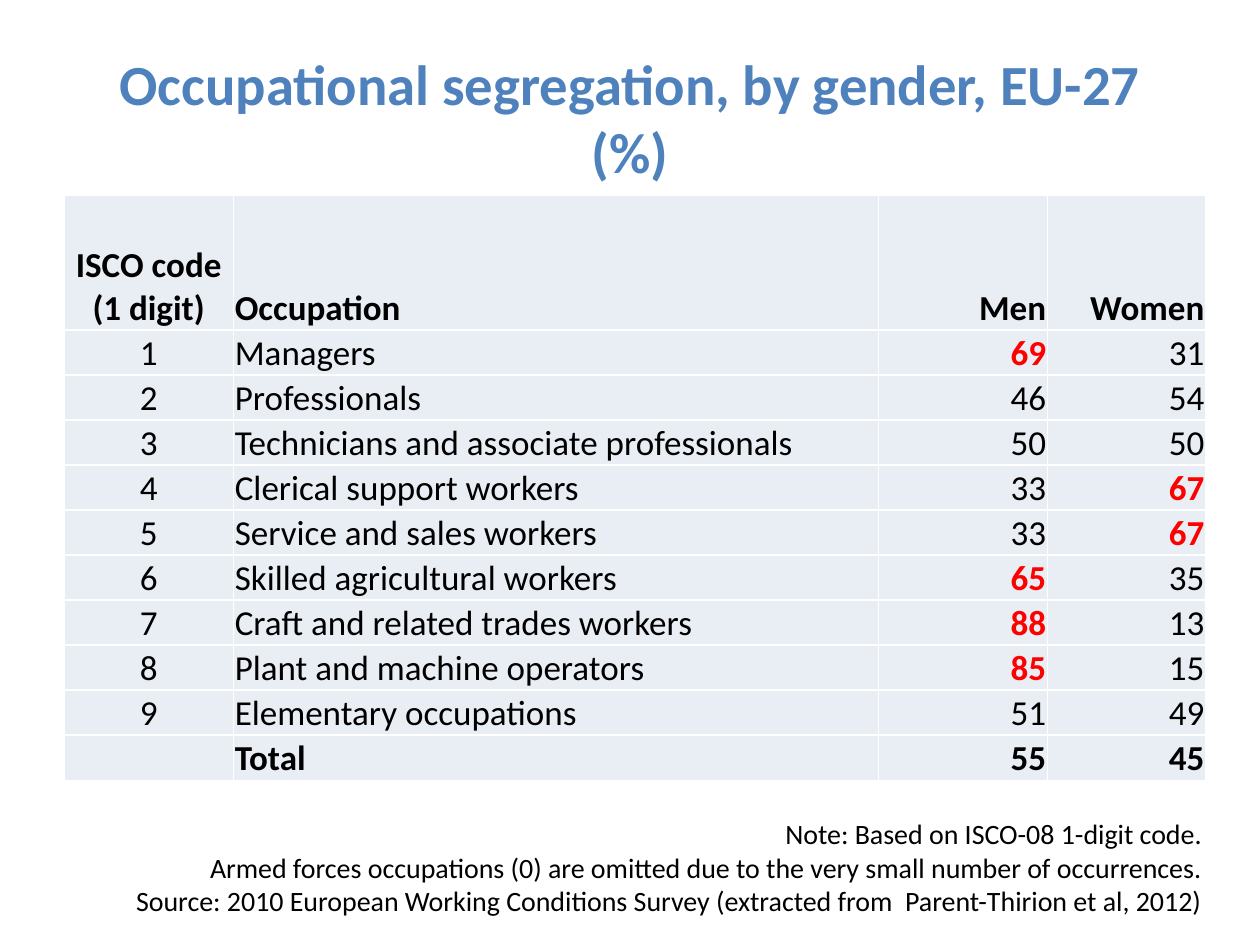
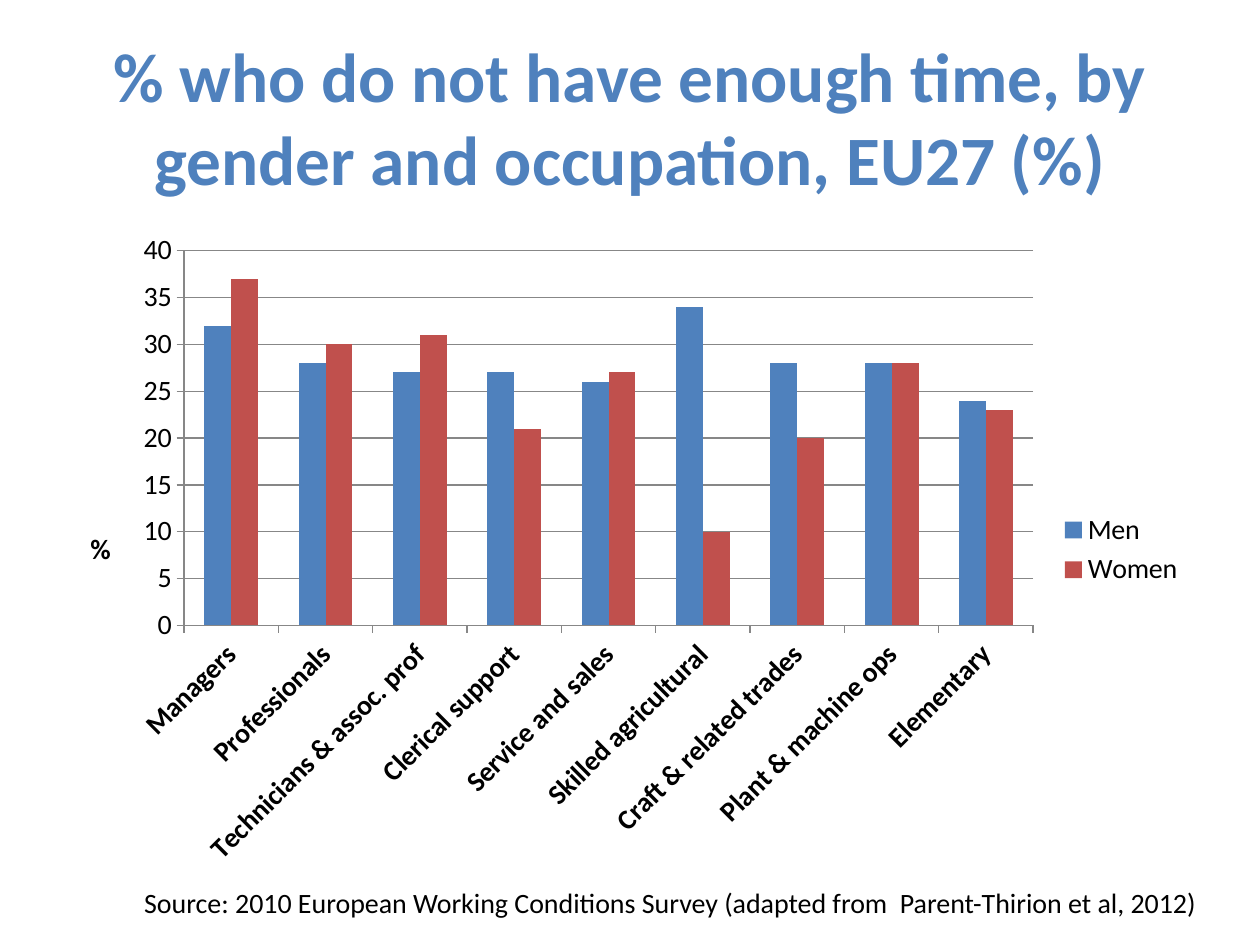
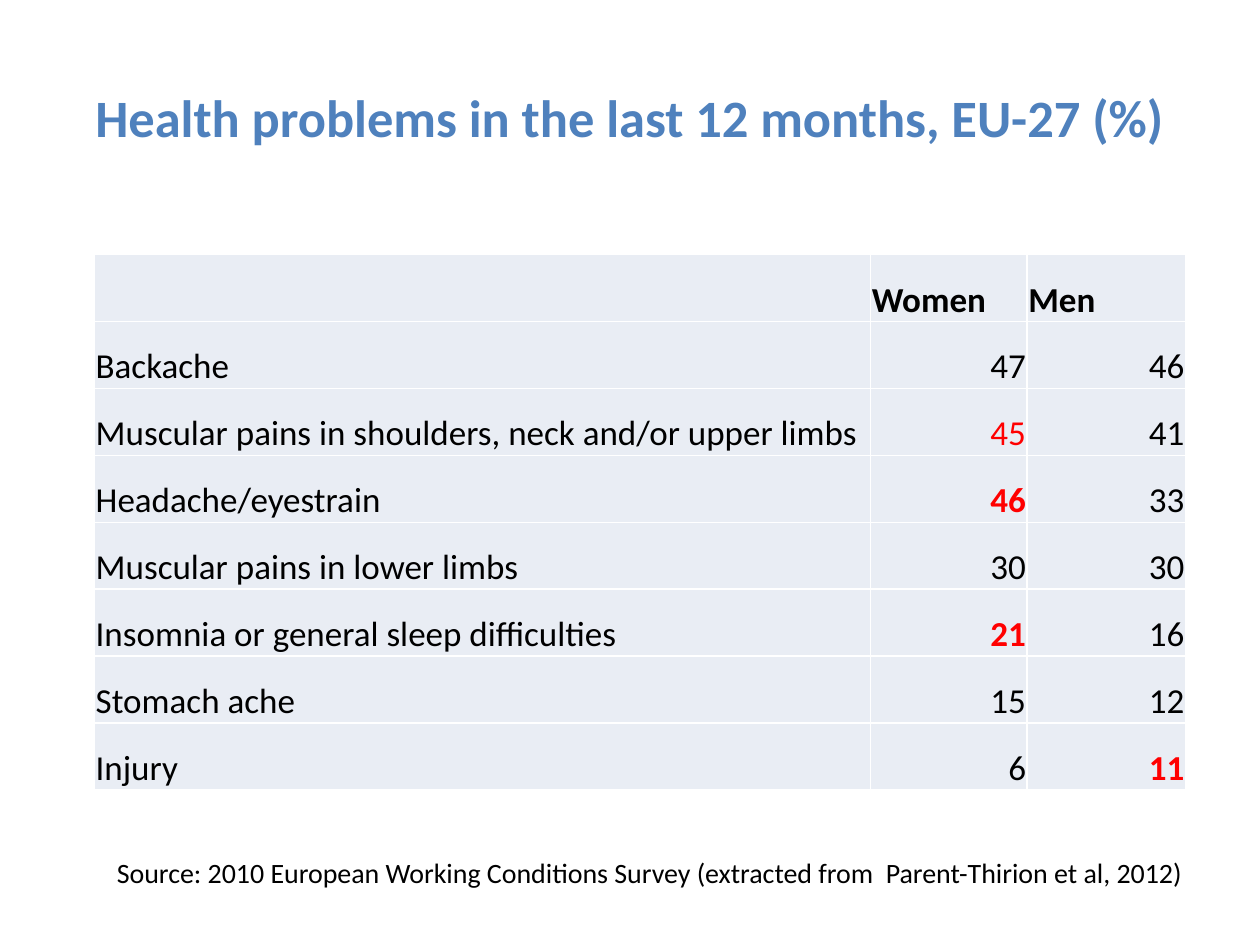
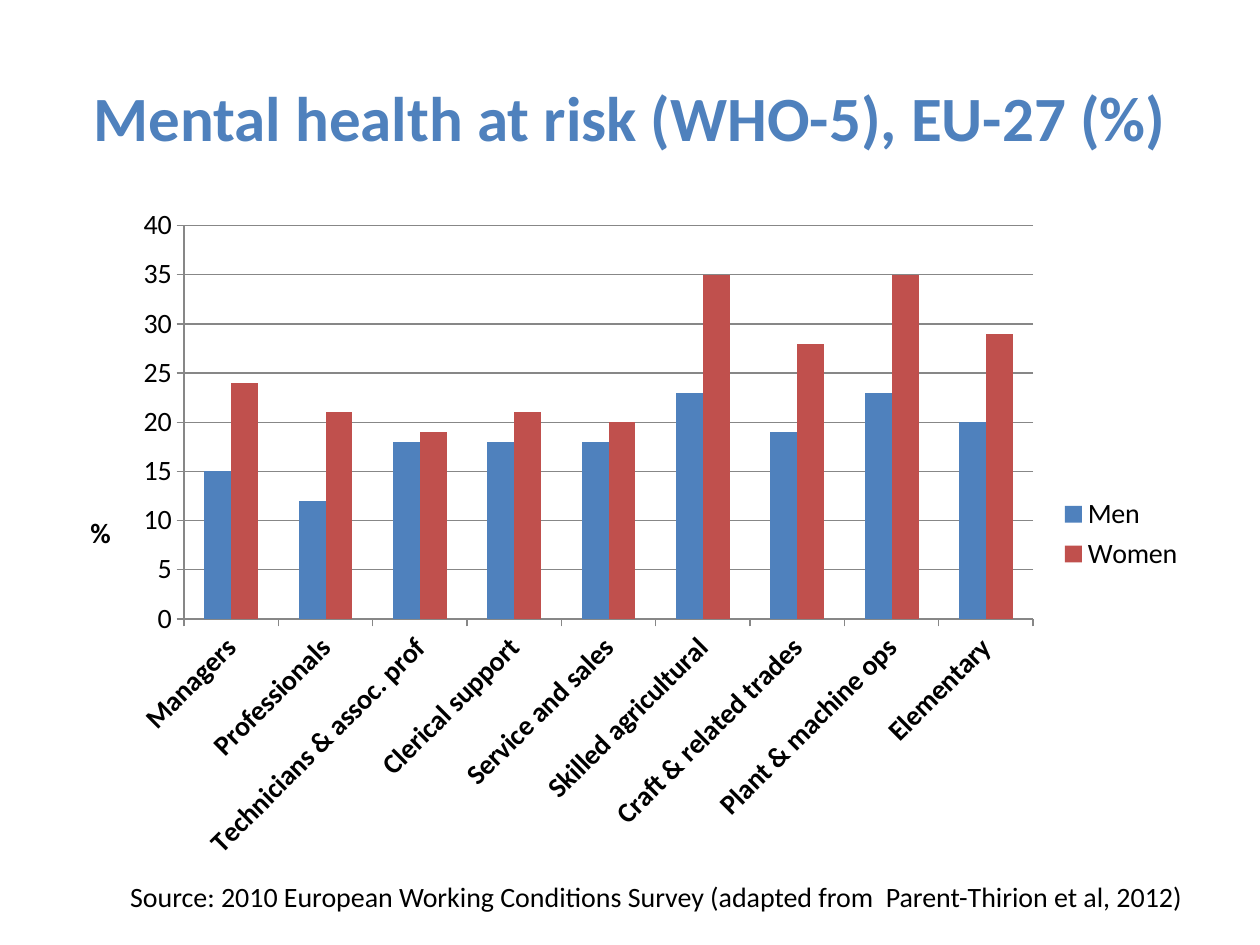
"""Build four slides on gender, occupation and health at work in the EU."""
from lxml.etree import SubElement
from pptx import Presentation
from pptx.chart.data import CategoryChartData
from pptx.dml.color import RGBColor
from pptx.enum.chart import XL_CHART_TYPE, XL_LEGEND_POSITION, XL_TICK_MARK
from pptx.enum.text import MSO_ANCHOR, MSO_AUTO_SIZE, PP_ALIGN
from pptx.oxml.ns import qn
from pptx.util import Pt

COLORS = {"title": "4F81BD", "text": "000000", "red": "FF0000", "cell": "E9EDF4",
          "border": "FFFFFF", "men": "4F81BD", "women": "C0504D", "axis": "878787"}
FONT = "Calibri"
SURVEY = "Source: 2010 European Working Conditions Survey"
EXTRACTED = f"{SURVEY} (extracted from  Parent-Thirion et al, 2012)"
ADAPTED = f"{SURVEY} (adapted from  Parent-Thirion et al, 2012)"
OCCUPATIONS = ["Managers", "Professionals", "Technicians & assoc. prof",
               "Clerical support", "Service and sales", "Skilled agricultural",
               "Craft & related trades", "Plant & machine ops", "Elementary"]
L, C, R = PP_ALIGN.LEFT, PP_ALIGN.CENTER, PP_ALIGN.RIGHT

SLIDES = [
    {"title": "Occupational segregation, by gender, EU-27 (%)", "size": 32.4,
     "table": {
         "at": (36.5, 111.5), "cols": [97, 368.5, 96.5, 90.5],
         "head_height": 77, "row_height": 25.75,
         "head_align": [C, L, R, R], "align": [C, L, R, R],
         "rows": [
             ("ISCO code (1 digit)", "Occupation", "Men", "Women"),
             ("1", "Managers", "69", "31"),
             ("2", "Professionals", "46", "54"),
             ("3", "Technicians and associate professionals", "50", "50"),
             ("4", "Clerical support workers", "33", "67"),
             ("5", "Service and sales workers", "33", "67"),
             ("6", "Skilled agricultural workers", "65", "35"),
             ("7", "Craft and related trades workers", "88", "13"),
             ("8", "Plant and machine operators", "85", "15"),
             ("9", "Elementary occupations", "51", "49"),
             ("", "Total", "55", "45")],
         "bold_rows": {0, 10},
         "red": {(1, 2), (4, 3), (5, 3), (6, 2), (7, 2), (8, 2)},
         "light": set()},
     "note": ["Note: Based on ISCO-08 1-digit code.",
              "Armed forces occupations (0) are omitted due to the very small "
              "number of occurrences.", EXTRACTED],
     "note_at": (42, 463, 652, 65.5)},
    {"title": "% who do not have enough time, by gender and occupation, EU27 (%)",
     "size": 39.6,
     "chart": {"at": (36, 126, 648, 376.5),
               "Men": [32, 28, 27, 27, 26, 34, 28, 28, 24],
               "Women": [37, 30, 31, 21, 27, 10, 20, 28, 23]},
     "note": [ADAPTED], "note_at": (31, 502.5, 660, 26.5)},
    {"title": "Health problems in the last 12 months, EU-27 (%)", "size": 30,
     "table": {
         "at": (54, 145.5), "cols": [443.5, 89.5, 90.5],
         "head_height": 38.25, "row_height": 38.25,
         "head_align": [L, L, L], "align": [L, R, R],
         "rows": [
             ("", "Women", "Men"),
             ("Backache", "47", "46"),
             ("Muscular pains in shoulders, neck and/or upper limbs", "45", "41"),
             ("Headache/eyestrain", "46", "33"),
             ("Muscular pains in lower limbs", "30", "30"),
             ("Insomnia or general sleep difficulties", "21", "16"),
             ("Stomach ache", "15", "12"),
             ("Injury", "6", "11")],
         "bold_rows": {0},
         "red": {(2, 1), (3, 1), (5, 1), (7, 2)},
         "light": {(2, 1)}},
     "note": [EXTRACTED], "note_at": (48, 485.5, 635, 26.5)},
    {"title": "Mental health at risk (WHO-5), EU-27 (%)", "size": 36,
     "chart": {"at": (36, 111.5, 648, 387.5),
               "Men": [15, 12, 18, 18, 18, 23, 19, 23, 20],
               "Women": [24, 21, 19, 21, 20, 35, 28, 35, 29]},
     "note": [ADAPTED], "note_at": (48, 499, 635, 26.5)},
]


def set_attrs(obj, **values):
    for name, value in values.items():
        setattr(obj, name, value)


def set_font(font, size, color="text", bold=False):
    set_attrs(font, name=FONT, size=Pt(size), bold=bold)
    font.color.rgb = RGBColor.from_string(COLORS[color])


def add_title(s, text, size):
    sp = s.shapes.title
    set_attrs(sp, left=Pt(36), top=Pt(21.6), width=Pt(648), height=Pt(90))
    tf = sp.text_frame
    set_attrs(tf, text=text, word_wrap=True, auto_size=MSO_AUTO_SIZE.NONE,
              vertical_anchor=MSO_ANCHOR.MIDDLE)
    tf.paragraphs[0].alignment = C
    set_font(tf.paragraphs[0].runs[0].font, size, "title", True)


def add_note(s, lines, at):
    tf = s.shapes.add_textbox(*map(Pt, at)).text_frame
    set_attrs(tf, word_wrap=True, auto_size=MSO_AUTO_SIZE.SHAPE_TO_FIT_TEXT,
              text="\n".join(lines))
    for p in tf.paragraphs:
        p.alignment = R
        set_font(p.runs[0].font, 16)


def add_borders(cell):
    tc_pr = cell._tc.get_or_add_tcPr()
    for i, side in enumerate(("lnL", "lnR", "lnT", "lnB")):
        ln = tc_pr.makeelement(qn(f"a:{side}"), {"w": str(Pt(1))})
        fill = SubElement(ln, qn("a:solidFill"))
        SubElement(fill, qn("a:srgbClr"), val=COLORS["border"])
        tc_pr.insert(i, ln)


def add_table(s, spec):
    rows, cols = spec["rows"], spec["cols"]
    heights = [spec["head_height"]] + [spec["row_height"]] * (len(rows) - 1)
    size = (sum(cols), sum(heights))
    table = s.shapes.add_table(len(rows), len(cols), *map(Pt, spec["at"] + size)).table
    set_attrs(table, first_row=False, horz_banding=False)
    for col, width in zip(table.columns, cols):
        col.width = Pt(width)
    for i, (row, height) in enumerate(zip(rows, heights)):
        table.rows[i].height = Pt(height)
        for j, text in enumerate(row):
            cell = table.cell(i, j)
            set_attrs(cell, text=text, vertical_anchor=MSO_ANCHOR.BOTTOM,
                      margin_left=Pt(0.7), margin_right=Pt(0.7),
                      margin_top=Pt(0.7), margin_bottom=0)
            cell.fill.solid()
            cell.fill.fore_color.rgb = RGBColor.from_string(COLORS["cell"])
            add_borders(cell)
            p = cell.text_frame.paragraphs[0]
            p.alignment = spec["align" if i else "head_align"][j]
            red = (i, j) in spec["red"]
            bold = i in spec["bold_rows"] or red and (i, j) not in spec["light"]
            for r in p.runs:
                set_font(r.font, 20, "red" if red else "text", bold)


def add_chart(s, spec):
    data = CategoryChartData()
    data.categories = OCCUPATIONS
    for name in ("Men", "Women"):
        data.add_series(name, spec[name])
    chart = s.shapes.add_chart(XL_CHART_TYPE.COLUMN_CLUSTERED,
                               *map(Pt, spec["at"]), data).chart
    set_attrs(chart, has_title=False, has_legend=True)
    set_font(chart.font, 10)
    set_attrs(chart.legend, position=XL_LEGEND_POSITION.RIGHT, include_in_layout=False)
    set_font(chart.legend.font, 16)

    plot = chart.plots[0]
    set_attrs(plot, gap_width=150, overlap=0, vary_by_categories=False)
    for series in plot.series:
        series.invert_if_negative = False
        series.format.fill.solid()
        color = COLORS[series.name.lower()]
        series.format.fill.fore_color.rgb = RGBColor.from_string(color)

    cat, val = chart.category_axis, chart.value_axis
    set_attrs(val, minimum_scale=0, maximum_scale=40, major_unit=5,
              has_major_gridlines=True)
    for axis, bold in ((cat, True), (val, False)):
        set_attrs(axis, major_tick_mark=XL_TICK_MARK.OUTSIDE,
                  minor_tick_mark=XL_TICK_MARK.NONE)
        set_font(axis.tick_labels.font, 16, bold=bold)
    for part in (cat, val, val.major_gridlines):
        part.format.line.width = Pt(0.75)
        part.format.line.color.rgb = RGBColor.from_string(COLORS["axis"])
    cat._element.find(qn("c:txPr")).find(qn("a:bodyPr")).set("rot", "-2700000")

    tf = val.axis_title.text_frame
    tf.text = "%"
    set_font(tf.paragraphs[0].runs[0].font, 16, bold=True)
    body = tf._txBody.find(qn("a:bodyPr"))
    body.set("rot", "0")
    body.set("vert", "horz")


def main():
    prs = Presentation()
    set_attrs(prs, slide_width=Pt(720), slide_height=Pt(540))
    for spec in SLIDES:
        s = prs.slides.add_slide(prs.slide_layouts[5])
        add_title(s, spec["title"], spec["size"])
        if "table" in spec:
            add_table(s, spec["table"])
        else:
            add_chart(s, spec["chart"])
        add_note(s, spec["note"], spec["note_at"])
    prs.save("out.pptx")


if __name__ == "__main__":
    main()
